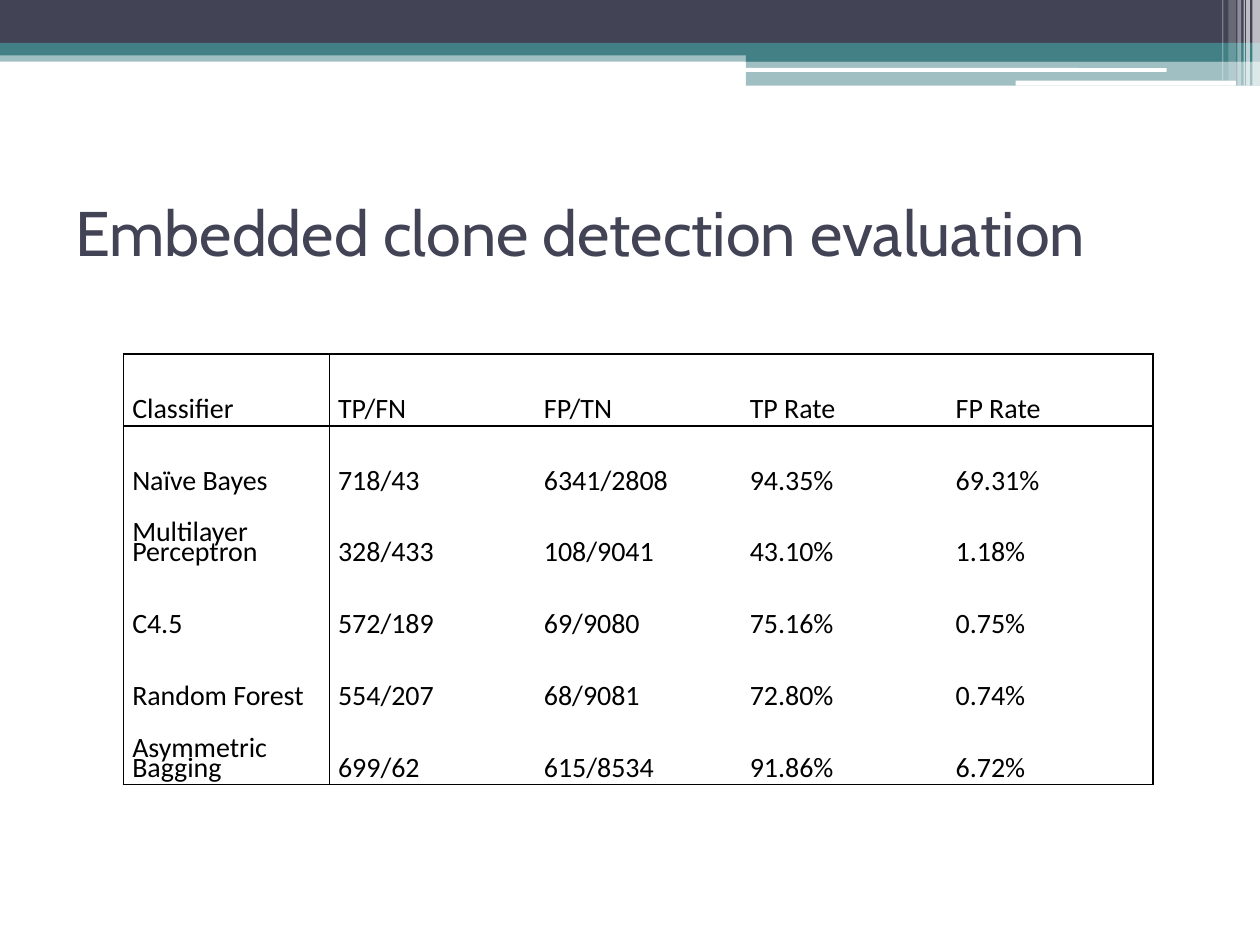
import dataclasses

import pptx
import pptx.dml.color
import pptx.enum.shapes
import pptx.enum.text
import pptx.oxml
import pptx.oxml.ns
import pptx.util
from lxml import etree

Inches = pptx.util.Inches
Pt = pptx.util.Pt
Shapes = pptx.enum.shapes.MSO_SHAPE
Anchor = pptx.enum.text.MSO_ANCHOR


@dataclasses.dataclass(frozen=True)
class Theme:
    navy: str = "424456"
    teal: str = "438086"
    white: str = "FFFFFF"
    black: str = "000000"
    title_font: str = "Cabin"
    table_font: str = "Calibri"
    title_size: float = 36
    table_size: float = 16
    table_leading: float = 11.5
    border_width: float = 1


THEME = Theme()

BANDS = [
    (0, 0.4, 10, 0.09, THEME.teal, 50),
    (0, 0, 10, 0.34, THEME.navy, 100),
    (0, 0.34, 10, 0.1, THEME.teal, 100),
    (5.92, 0.39, 4.08, 0.1, THEME.teal, 100),
    (5.92, 0.48, 4.08, 0.2, THEME.teal, 50),
]
HIGHLIGHTS = [(5.91, 0.54, 3.35, 0.03), (8.06, 0.64, 1.75, 0.04)]
STRIPES = [
    (9.94, 0.06, 0.68, 65),
    (9.89, 0.03, 0.68, 65),
    (9.87, 0.01, 0.68, 60),
    (9.82, 0.03, 0.68, 40),
    (9.75, 0.06, 0.64, 20),
    (9.7, 0.01, 0.64, 30),
]

RESULTS = [
    ("Classifier", "TP/FN", "FP/TN", "TP Rate", "FP Rate"),
    ("Naïve Bayes", "718/43", "6341/2808", "94.35%", "69.31%"),
    ("Multilayer Perceptron", "328/433", "108/9041", "43.10%", "1.18%"),
    ("C4.5", "572/189", "69/9080", "75.16%", "0.75%"),
    ("Random Forest", "554/207", "68/9081", "72.80%", "0.74%"),
    ("Asymmetric Bagging", "699/62", "615/8534", "91.86%", "6.72%"),
]


def apply_format(target, values):
    for name, value in values.items():
        setattr(target, name, value)


def write_text(para, text, font, size, color):
    span = para.add_run()
    span.text = text
    apply_format(span.font, {"name": font, "size": Pt(size), "bold": False})
    span.font.color.rgb = pptx.dml.color.RGBColor.from_string(color)


def add_bar(page, box, color, opacity=100, kind=Shapes.RECTANGLE):
    bar = page.shapes.add_shape(kind, *map(Inches, box))
    bar.shadow.inherit = False
    bar.line.fill.background()
    bar.fill.solid()
    bar.fill.fore_color.rgb = pptx.dml.color.RGBColor.from_string(color)
    if opacity < 100:
        tint = bar.fill._xPr.find(".//" + pptx.oxml.ns.qn("a:srgbClr"))
        etree.SubElement(tint, pptx.oxml.ns.qn("a:alpha"), val=str(opacity * 1000))


def add_banner(page, box):
    left, top, width, height = box
    for x, y, bar_width, bar_height, color, opacity in BANDS:
        add_bar(page, (left + x, top + y, bar_width, bar_height), color, opacity)
    for x, y, bar_width, bar_height in HIGHLIGHTS:
        place = (left + x, top + y, bar_width, bar_height)
        add_bar(page, place, THEME.white, kind=Shapes.ROUNDED_RECTANGLE)
    for x, bar_width, bar_height, opacity in STRIPES:
        add_bar(page, (left + x, top, bar_width, bar_height), THEME.white, opacity)


def add_title(page, box, text):
    frame = page.shapes.add_textbox(*map(Inches, box)).text_frame
    apply_format(frame, {"word_wrap": True, "vertical_anchor": Anchor.MIDDLE})
    write_text(frame.paragraphs[0], text, THEME.title_font, THEME.title_size, THEME.navy)


def set_borders(cell, edges):
    properties = cell._tc.get_or_add_tcPr()
    for side, visible in edges.items():
        line = etree.SubElement(properties, pptx.oxml.ns.qn("a:ln" + side))
        if visible:
            line.set("w", str(Pt(THEME.border_width)))
            fill = etree.SubElement(line, pptx.oxml.ns.qn("a:solidFill"))
            etree.SubElement(fill, pptx.oxml.ns.qn("a:srgbClr"), val=THEME.black)
        else:
            etree.SubElement(line, pptx.oxml.ns.qn("a:noFill"))


def add_results(page, box, rows):
    row_count, column_count = len(rows), len(rows[0])
    last_row, last_column = row_count - 1, column_count - 1
    left, top, width, height = map(Inches, box)
    table = page.shapes.add_table(row_count, column_count, left, top, width, height).table
    apply_format(table, {"first_row": False, "horz_banding": False})
    cell_format = {
        "margin_left": Inches(0.07),
        "margin_right": Inches(0.07),
        "margin_top": 0,
        "margin_bottom": 0,
        "vertical_anchor": Anchor.BOTTOM,
    }
    for r, row in enumerate(rows):
        for c, text in enumerate(row):
            cell = table.cell(r, c)
            apply_format(cell, cell_format)
            set_borders(cell, {
                "L": c in (0, 1),
                "R": c in (0, last_column),
                "T": r in (0, 1),
                "B": r in (0, last_row),
            })
            cell.fill.background()
            para = cell.text_frame.paragraphs[0]
            para.line_spacing = Pt(THEME.table_leading)
            write_text(para, text, THEME.table_font, THEME.table_size, THEME.black)


def main():
    deck = pptx.Presentation()
    apply_format(deck, {"slide_width": Inches(10), "slide_height": Inches(7.5)})
    page = deck.slides.add_slide(deck.slide_layouts[6])
    add_banner(page, (0, 0, 10, 0.68))
    add_title(page, (0.5, 1.25, 9, 1.17), "Embedded clone detection evaluation")
    add_results(page, (0.98, 2.81, 8.17, 3.42), RESULTS)
    deck.save("out.pptx")


if __name__ == "__main__":
    main()
